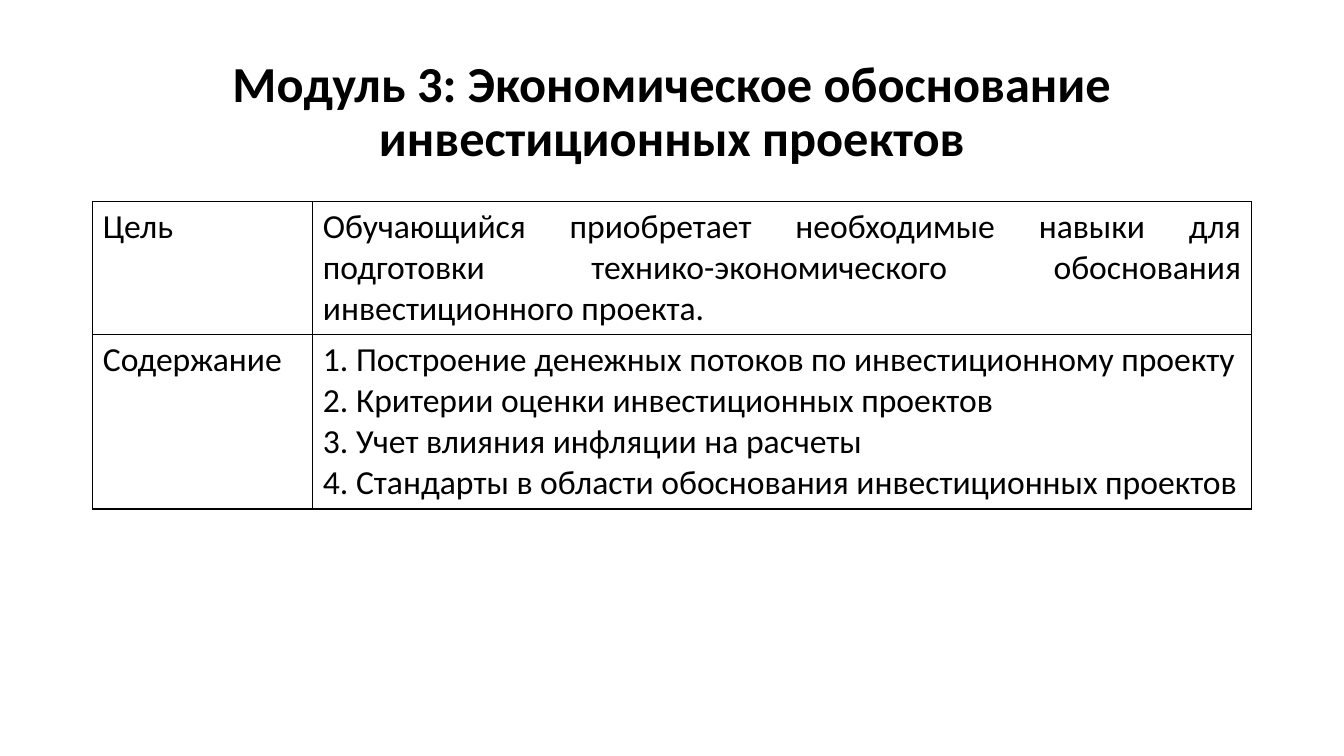
from dataclasses import dataclass

from lxml import etree
from pptx import Presentation
from pptx.dml.color import RGBColor
from pptx.enum.text import MSO_ANCHOR, PP_ALIGN
from pptx.oxml.ns import qn
from pptx.slide import Slide
from pptx.table import _Cell
from pptx.text.text import _Paragraph
from pptx.util import Inches, Pt

LEFT, CENTER, JUSTIFY = PP_ALIGN.LEFT, PP_ALIGN.CENTER, PP_ALIGN.JUSTIFY
MIDDLE = MSO_ANCHOR.MIDDLE

SLIDE_WIDTH, SLIDE_HEIGHT = Inches(13.33), Inches(7.5)
MARGIN = Inches(0.92)
CONTENT_WIDTH = SLIDE_WIDTH - 2 * MARGIN
TITLE_TOP, TITLE_HEIGHT = Inches(0.4), Inches(1.45)
TABLE_TOP = Inches(2)
LABEL_SHARE = 0.19


@dataclass(frozen=True)
class Theme:
    font: str = "Calibri"
    ink: str = "000000"
    title_size: int = 36
    body_size: int = 24
    border_width: int = 1


@dataclass(frozen=True)
class ModuleRow:
    label: str
    lines: tuple[str, ...]
    height: float


THEME = Theme()
TITLE = "Модуль 3: Экономическое обоснование инвестиционных проектов"
ROWS = (
    ModuleRow(
        "Цель",
        ("Обучающийся приобретает необходимые навыки для подготовки "
         "технико-экономического обоснования инвестиционного проекта.",),
        1.32,
    ),
    ModuleRow(
        "Содержание",
        ("1. Построение денежных потоков по инвестиционному проекту",
         "2. Критерии оценки инвестиционных проектов",
         "3. Учет влияния инфляции на расчеты",
         "4. Стандарты в области обоснования инвестиционных проектов"),
        1.73,
    ),
)


def write_paragraph(paragraph: _Paragraph, text: str, size: int,
                    alignment: PP_ALIGN, bold: bool = False) -> None:
    paragraph.text = text
    paragraph.alignment = alignment
    font = paragraph.font
    font.name, font.size, font.bold = THEME.font, Pt(size), bold
    font.color.rgb = RGBColor.from_string(THEME.ink)


def add_borders(cell: _Cell) -> None:
    properties = cell._tc.get_or_add_tcPr()
    for side in ("lnL", "lnR", "lnT", "lnB"):
        line = etree.SubElement(properties, qn(f"a:{side}"),
                                w=str(Pt(THEME.border_width)))
        fill = etree.SubElement(line, qn("a:solidFill"))
        etree.SubElement(fill, qn("a:srgbClr"), val=THEME.ink)


def fill_cell(cell: _Cell, lines: tuple[str, ...], alignment: PP_ALIGN) -> None:
    add_borders(cell)
    cell.fill.background()
    frame = cell.text_frame
    for index, text in enumerate(lines):
        paragraph = frame.add_paragraph() if index else frame.paragraphs[0]
        write_paragraph(paragraph, text, THEME.body_size, alignment)


def add_title(slide: Slide) -> None:
    shape = slide.shapes.add_textbox(MARGIN, TITLE_TOP, CONTENT_WIDTH, TITLE_HEIGHT)
    frame = shape.text_frame
    frame.word_wrap = True
    frame.vertical_anchor = MIDDLE
    paragraph = frame.paragraphs[0]
    write_paragraph(paragraph, TITLE, THEME.title_size, CENTER, bold=True)
    paragraph.line_spacing = 0.9


def add_module_table(slide: Slide) -> None:
    height = Inches(sum(row.height for row in ROWS))
    table = slide.shapes.add_table(len(ROWS), 2, MARGIN, TABLE_TOP,
                                   CONTENT_WIDTH, height).table
    table.first_row = table.horz_banding = False
    label_width = int(CONTENT_WIDTH * LABEL_SHARE)
    table.columns[0].width = label_width
    table.columns[1].width = CONTENT_WIDTH - label_width
    for index, row in enumerate(ROWS):
        table.rows[index].height = Inches(row.height)
        fill_cell(table.cell(index, 0), (row.label,), LEFT)
        fill_cell(table.cell(index, 1), row.lines, JUSTIFY)


def main() -> None:
    presentation = Presentation()
    presentation.slide_width, presentation.slide_height = SLIDE_WIDTH, SLIDE_HEIGHT
    slide = presentation.slides.add_slide(presentation.slide_layouts[6])
    add_title(slide)
    add_module_table(slide)
    presentation.save("out.pptx")


if __name__ == "__main__":
    main()
